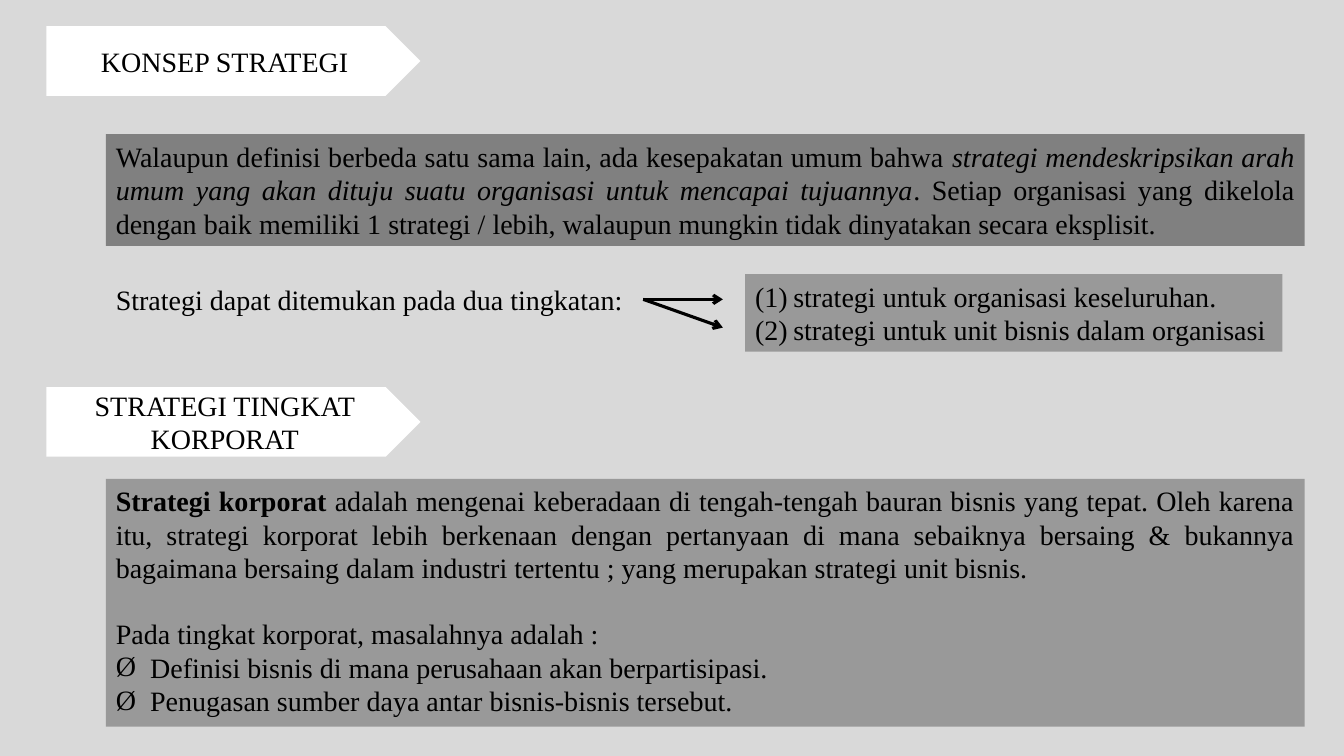
from lxml.etree import SubElement
from pptx import Presentation
from pptx.dml.color import RGBColor
from pptx.enum.shapes import MSO_CONNECTOR, MSO_SHAPE
from pptx.enum.text import MSO_ANCHOR, MSO_AUTO_SIZE, PP_ALIGN
from pptx.oxml.ns import qn
from pptx.util import Inches, Pt

BLACK = RGBColor(0x00, 0x00, 0x00)
WHITE = RGBColor(0xFF, 0xFF, 0xFF)
BACKGROUND = RGBColor(0xD9, 0xD9, 0xD9)
DARK_GREY = RGBColor(0x80, 0x80, 0x80)
MID_GREY = RGBColor(0x99, 0x99, 0x99)
FONT, SIZE = "Times New Roman", Pt(20)
LINE_GAP = Pt(23)

# Columns shared by both sections
TAG_X, BODY_X, BODY_W = 0.46, 1.05, 11.89


def add_runs(p, runs, align):
    """Fill a paragraph with (text, style) runs; style is "", "b" or "i"."""
    p.alignment = align
    for text, style in runs:
        r = p.add_run()
        r.text = text
        r.font.name, r.font.size = FONT, SIZE
        r.font.bold, r.font.italic = style == "b", style == "i"
        r.font.color.rgb = BLACK


def add_bullet(p, indent, tag, **attrs):
    pPr = p._p.get_or_add_pPr()
    pPr.set("marL", str(Inches(indent)))
    pPr.set("indent", str(-Inches(indent)))
    if tag == "a:buChar":
        SubElement(pPr, qn("a:buFont"), typeface=FONT)
    SubElement(pPr, qn(tag), **attrs)


def add_box(s, box, fill, paragraphs, align=PP_ALIGN.LEFT,
            preset=MSO_SHAPE.RECTANGLE, anchor=MSO_ANCHOR.TOP):
    """Place a text block; without a fill it is a plain text box."""
    place = [Inches(v) for v in box]
    if fill is None:
        sp = s.shapes.add_textbox(*place)
    else:
        sp = s.shapes.add_shape(preset, *place)
        sp.shadow.inherit = False
        sp.fill.solid()
        sp.fill.fore_color.rgb = fill
        sp.line.fill.background()
    tf = sp.text_frame
    tf.word_wrap, tf.vertical_anchor = True, anchor
    if anchor == MSO_ANCHOR.TOP:
        tf.auto_size = MSO_AUTO_SIZE.SHAPE_TO_FIT_TEXT
    for i, runs in enumerate(paragraphs):
        p = tf.add_paragraph() if i else tf.paragraphs[0]
        add_runs(p, runs, align)
    return sp


def add_heading(s, y, title):
    add_box(s, (TAG_X, y, 3.71, 0.69), WHITE, [[(title, "")]],
            PP_ALIGN.CENTER, MSO_SHAPE.PENTAGON, MSO_ANCHOR.MIDDLE)


def add_arrow(s, source, x, y):
    """Arrow from the right side of the source box to a point."""
    cn = s.shapes.add_connector(MSO_CONNECTOR.STRAIGHT, 0, 0, Inches(x), Inches(y))
    cn.begin_connect(source, 3)
    cn.line.color.rgb = BLACK
    cn.line.width = Pt(2.25)
    SubElement(cn.line._get_or_add_ln(), qn("a:tailEnd"), type="arrow")
    SubElement(cn._element.spPr, qn("a:effectLst"))


def add_levels(s, y):
    """The two levels of strategy, with arrows from the lead-in."""
    lead = add_box(s, (BODY_X, y + 0.03, 5.33, 0.44), None,
                   [[("Strategi dapat ditemukan pada dua tingkatan:", "")]])
    for end_y in (y + 0.25, y + 0.53):
        add_arrow(s, lead, 7.17, end_y)
    levels = add_box(s, (7.39, y, 5.33, 0.77), MID_GREY, [
        [("strategi untuk organisasi keseluruhan.", "")],
        [("strategi untuk unit bisnis dalam organisasi", "")]])
    for p in levels.text_frame.paragraphs:
        add_bullet(p, 0.38, "a:buAutoNum", type="arabicParenBoth")


def add_concept(s, y):
    add_heading(s, y, "KONSEP STRATEGI")
    add_box(s, (BODY_X, y + 1.07, BODY_W, 1.11), DARK_GREY, [[
        ("Walaupun definisi berbeda satu sama lain, ada kesepakatan umum bahwa ", ""),
        ("strategi mendeskripsikan arah umum yang akan dituju suatu organisasi "
         "untuk mencapai tujuannya", "i"),
        (". Setiap organisasi yang dikelola dengan baik memiliki 1 strategi / lebih, "
         "walaupun mungkin tidak dinyatakan secara eksplisit.", "")]],
        PP_ALIGN.JUSTIFY)
    add_levels(s, y + 2.46)


def add_corporate(s, y):
    add_heading(s, y, "STRATEGI TINGKAT KORPORAT")
    body = add_box(s, (BODY_X, y + 0.91, BODY_W, 2.46), MID_GREY, [
        [("Strategi korporat ", "b"),
         ("adalah mengenai keberadaan di tengah-tengah bauran bisnis yang tepat. "
          "Oleh karena itu, strategi korporat lebih berkenaan dengan pertanyaan "
          "di mana sebaiknya bersaing & bukannya bagaimana bersaing dalam industri "
          "tertentu ; yang merupakan strategi unit bisnis.", "")],
        [("Pada tingkat korporat, masalahnya adalah :", "")],
        [("Definisi bisnis di mana perusahaan akan berpartisipasi.", "")],
        [("Penugasan sumber daya antar bisnis-bisnis tersebut.", "")]],
        PP_ALIGN.JUSTIFY)
    _, question, *issues = body.text_frame.paragraphs
    question.space_before = LINE_GAP
    for p in issues:
        add_bullet(p, 0.34, "a:buChar", char="Ø")


def main():
    prs = Presentation()
    prs.slide_width, prs.slide_height = Inches(13.33), Inches(7.5)
    s = prs.slides.add_slide(prs.slide_layouts[6])
    s.background.fill.solid()
    s.background.fill.fore_color.rgb = BACKGROUND
    add_concept(s, 0.26)
    add_corporate(s, 3.84)
    prs.save("out.pptx")


if __name__ == "__main__":
    main()
